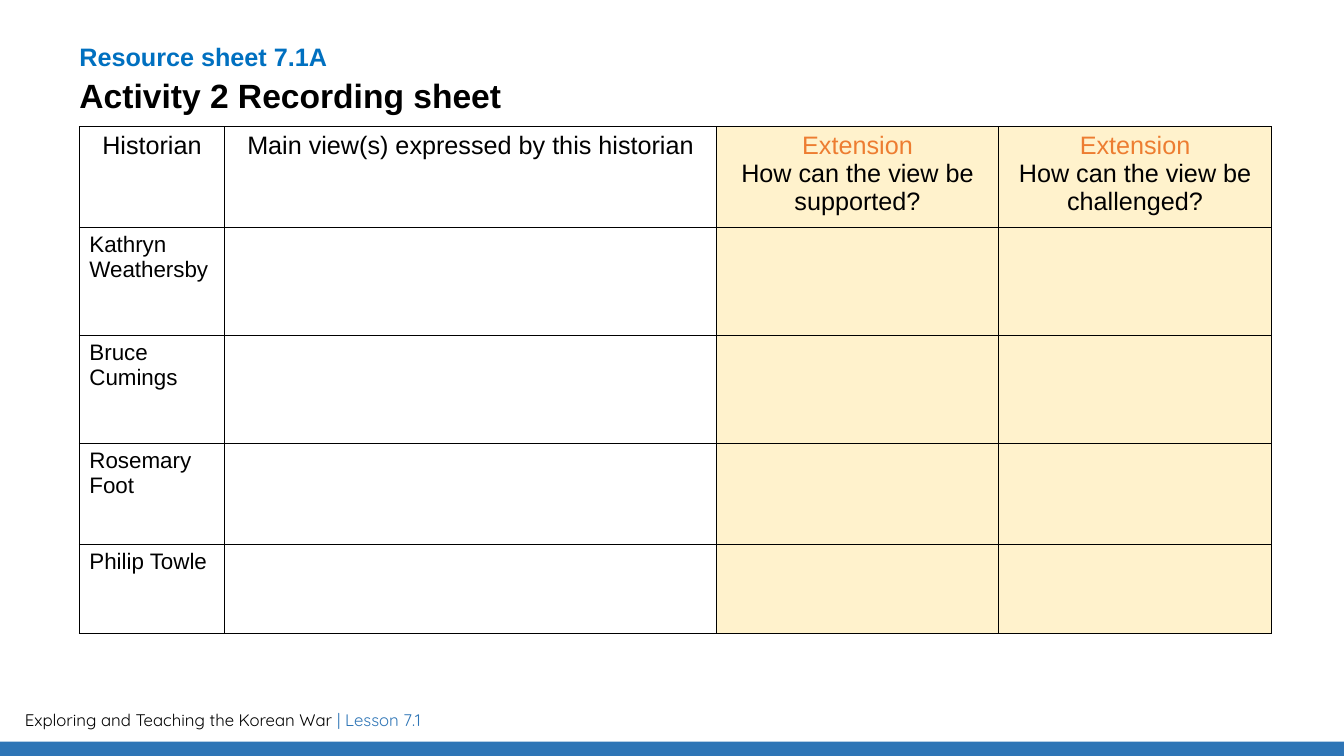
from lxml.etree import SubElement
from pptx import Presentation
from pptx.dml.color import RGBColor
from pptx.enum.shapes import MSO_SHAPE
from pptx.enum.text import MSO_ANCHOR, PP_ALIGN
from pptx.oxml.ns import qn
from pptx.util import Cm, Pt

COLORS = {
    "black": "000000",
    "blue": "0070C0",
    "bar": "2E75B6",
    "orange": "ED7D31",
    "cream": "FFF2CC",
}
WIDTHS = (3.66, 12.4, 7.1, 6.89)
HEIGHTS = (2.54, 2.72, 2.72, 2.54, 2.26)
HEADS = (
    ("Historian",),
    ("Main view(s) expressed by this historian",),
    ("Extension", "How can the view be supported?"),
    ("Extension", "How can the view be challenged?"),
)
NAMES = ("Kathryn Weathersby", "Bruce Cumings", "Rosemary Foot", "Philip Towle")


def color(name):
    return RGBColor.from_string(COLORS[name])


def style(font, size, name, face="Arial", bold=False):
    font.name = face
    font.size = Pt(size)
    font.bold = bold
    font.color.rgb = color(name)


def add_title(slide):
    title = slide.shapes.title
    title.left, title.top = Cm(2), Cm(1)
    title.width, title.height = Cm(15.45), Cm(1.8)
    frame = title.text_frame
    frame.margin_left = frame.margin_right = 0
    frame.margin_top = frame.margin_bottom = 0
    frame.vertical_anchor = MSO_ANCHOR.TOP
    para = frame.paragraphs[0]
    para.alignment = PP_ALIGN.LEFT
    para.line_spacing = 1.07
    run = para.add_run()
    run.text = "Resource sheet 7.1A"
    style(run.font, 18, "blue", bold=True)
    para.add_line_break()
    run = para.add_run()
    run.text = "Activity 2 Recording sheet"
    style(run.font, 24, "black", bold=True)


def add_edges(cell):
    props = cell._tc.get_or_add_tcPr()
    for side in ("lnL", "lnR", "lnT", "lnB"):
        line = SubElement(props, qn(f"a:{side}"), w=str(Pt(1)))
        fill = SubElement(line, qn("a:solidFill"))
        SubElement(fill, qn("a:srgbClr"), val=COLORS["black"])


def fill_cell(cell, lines, size, align):
    cell.text = "\n".join(lines)
    for para in cell.text_frame.paragraphs:
        para.alignment = align
        tint = "orange" if para.text == "Extension" else "black"
        style(para.font, size, tint)


def add_grid(slide):
    frame = slide.shapes.add_table(
        len(HEIGHTS), len(WIDTHS), Cm(2), Cm(3.19),
        Cm(sum(WIDTHS)), Cm(sum(HEIGHTS)))
    table = frame.table
    table.first_row = table.horz_banding = False
    for col, width in zip(table.columns, WIDTHS):
        col.width = Cm(width)
    for row, height in zip(table.rows, HEIGHTS):
        row.height = Cm(height)
        for index, cell in enumerate(row.cells):
            add_edges(cell)
            if index < 2:
                cell.fill.background()
            else:
                cell.fill.solid()
                cell.fill.fore_color.rgb = color("cream")
    for index, lines in enumerate(HEADS):
        fill_cell(table.cell(0, index), lines, 18, PP_ALIGN.CENTER)
    for index, name in enumerate(NAMES, 1):
        fill_cell(table.cell(index, 0), (name,), 16, PP_ALIGN.LEFT)


def add_footer(slide):
    box = slide.shapes.add_textbox(Cm(0.38), Cm(17.75), Cm(19.86), Cm(0.77))
    box.text_frame.word_wrap = True
    para = box.text_frame.paragraphs[0]
    for text, tint in (("Exploring and Teaching the Korean War ", "black"),
                       ("| Lesson 7.1", "bar")):
        run = para.add_run()
        run.text = text
        style(run.font, 12, tint, "Quicksand")


def add_bar(slide):
    bar = slide.shapes.add_shape(
        MSO_SHAPE.RECTANGLE, 0, Cm(18.69), Cm(33.87), Cm(0.36))
    bar.shadow.inherit = False
    bar.fill.solid()
    bar.fill.fore_color.rgb = color("bar")
    bar.line.fill.background()


def main():
    deck = Presentation()
    deck.slide_width, deck.slide_height = Cm(33.87), Cm(19.05)
    slide = deck.slides.add_slide(deck.slide_layouts[5])
    add_footer(slide)
    add_bar(slide)
    add_grid(slide)
    add_title(slide)
    deck.save("out.pptx")


if __name__ == "__main__":
    main()
